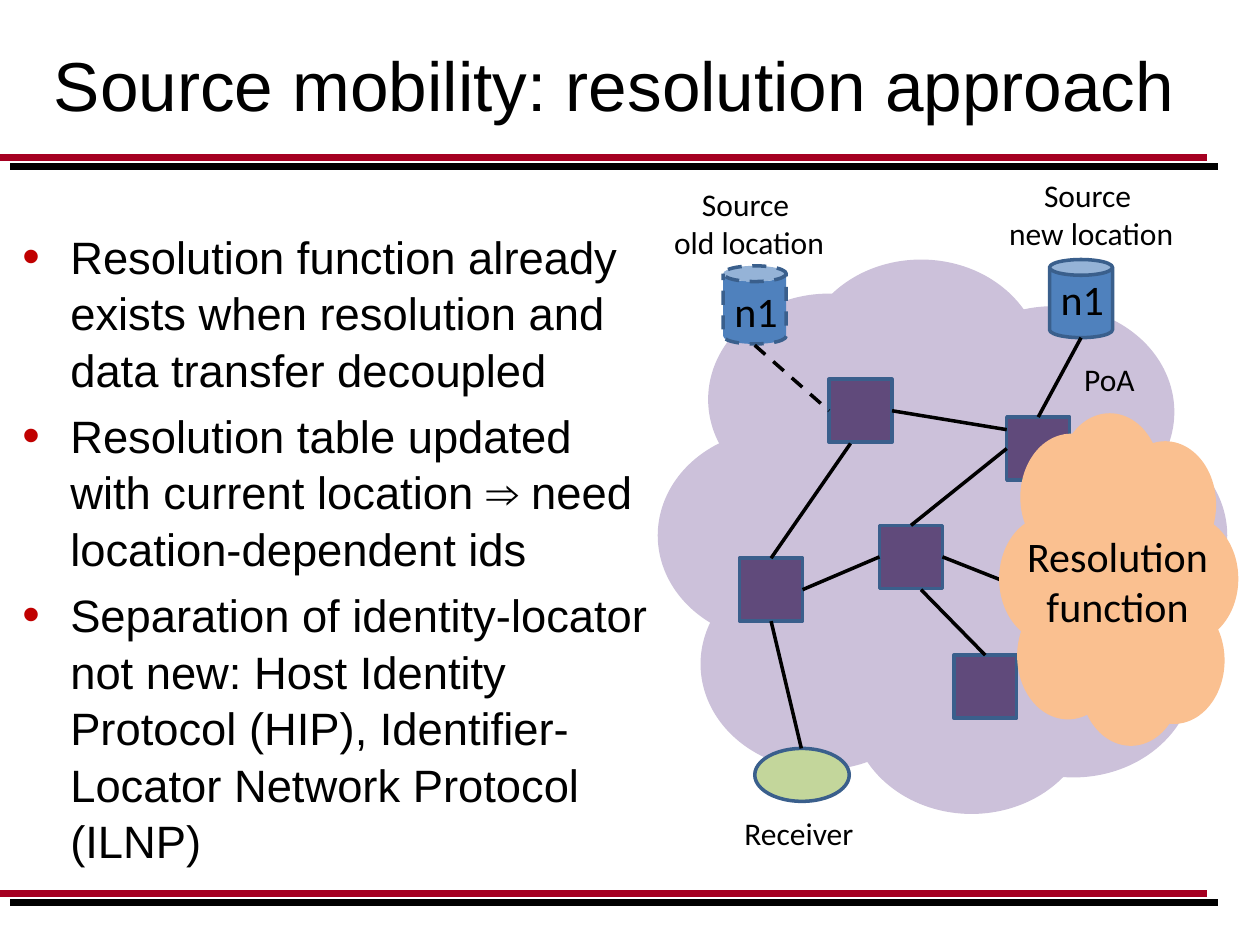
import pptx
import pptx.util
import pptx.dml.color
import pptx.oxml
import pptx.oxml.ns
from pptx.enum.dml import MSO_LINE
from pptx.enum.shapes import MSO_CONNECTOR, MSO_SHAPE
from pptx.enum.text import MSO_ANCHOR, MSO_AUTO_SIZE, PP_ALIGN

SCALE = 9144  # EMU per px, 100 px to the inch
TOP, LEFT, BOTTOM, RIGHT = range(4)
COLORS = {
    "text": "000000", "black": "000000", "rule": "A50021", "bullet": "C00000",
    "network": "CCC1DA", "resolver": "FAC090", "node": "604A7B",
    "source": "4F81BD", "receiver": "C3D69B", "outline": "3A5F8C",
}
# Lobes of a cloud, offset from its top left corner
LOBE_SIZE = (192, 168)
LOBES = [(59, 90), (113, 0), (218, 37), (34, 237), (153, 272),
         (234, 243), (40, 27), (0, 135), (260, 135), (153, 142)]


def px(length):
    return pptx.util.Emu(round(length * SCALE))


def color(name):
    return pptx.dml.color.RGBColor.from_string(COLORS[name])


def add_text(para, text, size=18, font="Calibri", ink="text"):
    span = para.add_run()
    span.text = text
    span.font.size = pptx.util.Pt(size)
    span.font.name = font
    span.font.color.rgb = color(ink)


class Painter:
    def __init__(self, page, outline_width=2):
        self.page = page
        self.outline_width = outline_width

    def text(self, left, top, width, height, lines, align=PP_ALIGN.LEFT,
             wrap=False, grow=True, anchor=MSO_ANCHOR.TOP, **style):
        box = self.page.shapes.add_textbox(px(left), px(top), px(width), px(height))
        frame = box.text_frame
        frame.word_wrap = wrap
        frame.auto_size = MSO_AUTO_SIZE.SHAPE_TO_FIT_TEXT if grow else MSO_AUTO_SIZE.NONE
        frame.vertical_anchor = anchor
        for index, line in enumerate(lines):
            para = frame.add_paragraph() if index else frame.paragraphs[0]
            para.alignment = align
            add_text(para, line, **style)
        return frame

    def bullets(self, left, top, width, height, items, **style):
        frame = self.text(left, top, width, height, items, wrap=True, grow=False, **style)
        for para in frame.paragraphs:
            para.space_before = pptx.util.Pt(5.5)
            para.line_spacing = 1.04
            props = para._p.get_or_add_pPr()
            props.set("marL", str(px(38)))
            props.set("indent", str(-px(38)))
            space = pptx.oxml.ns.nsdecls("a")
            for markup in (
                f'<a:buClr {space}><a:srgbClr val="{COLORS["bullet"]}"/></a:buClr>',
                f'<a:buSzPct {space} val="110000"/>',
                f'<a:buFont {space} typeface="Arial"/>',
                f'<a:buChar {space} char="•"/>',
            ):
                props.append(pptx.oxml.parse_xml(markup))

    def shape(self, kind, left, top, width, height, fill, outline=None, dashed=False):
        shape = self.page.shapes.add_shape(kind, px(left), px(top), px(width), px(height))
        shape.shadow.inherit = False
        shape.fill.solid()
        shape.fill.fore_color.rgb = color(fill)
        if outline:
            self.stroke(shape.line, outline, self.outline_width, dashed)
        else:
            shape.line.fill.background()
        return shape

    def stroke(self, line, ink, width, dashed):
        line.color.rgb = color(ink)
        line.width = pptx.util.Pt(width)
        if dashed:
            line.dash_style = MSO_LINE.DASH

    def cloud(self, left, top, across, down, fill):
        width, height = LOBE_SIZE
        for x, y in LOBES:
            self.shape(MSO_SHAPE.OVAL, left + x * across, top + y * down,
                       width * across, height * down, fill)

    def line(self, start, end, ink="black", width=2, dashed=False):
        """Each end is a point (x, y) or a pair (shape, side)."""
        line = self.page.shapes.add_connector(MSO_CONNECTOR.STRAIGHT, 0, 0, 0, 0)
        if isinstance(start[0], int):
            line.begin_x, line.begin_y = map(px, start)
        if isinstance(end[0], int):
            line.end_x, line.end_y = map(px, end)
        if not isinstance(start[0], int):
            line.begin_connect(*start)
        if not isinstance(end[0], int):
            line.end_connect(*end)
        self.stroke(line.line, ink, width, dashed)
        line._element.spPr.append(pptx.oxml.parse_xml(
            f'<a:effectLst {pptx.oxml.ns.nsdecls("a")}/>'))


def main():
    deck = pptx.Presentation()
    deck.slide_width, deck.slide_height = px(1000), px(750)
    painter = Painter(deck.slides.add_slide(deck.slide_layouts[6]))

    # Double rules above and below the content
    for y in (125, 709):
        painter.line((8, y + 7), (967, y + 7), width=4)
        painter.line((0, y), (958, y), ink="rule", width=4)

    # Title and bullets
    painter.text(33, 0, 967, 133, ["Source mobility: resolution approach"], wrap=True,
                 grow=False, anchor=MSO_ANCHOR.MIDDLE, size=39.6, font="Arial")
    painter.bullets(8, 175, 516, 550, [
        "Resolution function already exists when resolution and data transfer decoupled",
        "Resolution table updated with current location ⇒ need location-dependent ids",
        "Separation of identity-locator not new: Host Identity Protocol (HIP), "
        "Identifier-Locator Network Protocol (ILNP)",
    ], size=25.9, font="Arial")

    # Network cloud with its routers and end points
    painter.cloud(522, 206, 1, 1, "network")
    north, west, center, south, east, access = [
        painter.shape(MSO_SHAPE.RECTANGLE, left, top, 50, 50, "node", "outline")
        for left, top in [(658, 301), (587, 443), (698, 417),
                          (757, 520), (867, 464), (799, 331)]]
    painter.shape(MSO_SHAPE.OVAL, 599, 594, 75, 42, "receiver", "outline")
    painter.shape(MSO_SHAPE.CAN, 574, 211, 50, 62, "source", "outline", dashed=True)
    painter.shape(MSO_SHAPE.CAN, 833, 206, 50, 62, "source", "outline")

    # Links
    painter.line((599, 274), (north, LEFT), dashed=True)
    for start, end in [
        ((west, TOP), (675, 352)),
        ((access, TOP), (858, 268)),
        ((731, 468), (south, TOP)),
        ((636, 594), (west, BOTTOM)),
        ((north, RIGHT), (799, 341)),
        ((access, BOTTOM), (east, TOP)),
        ((799, 356), (center, TOP)),
        ((west, RIGHT), (center, LEFT)),
        ((center, RIGHT), (east, LEFT)),
    ]:
        painter.line(start, end)

    # Labels
    middle = PP_ALIGN.CENTER
    painter.text(524, 142, 141, 71, ["Source ", "old location"], middle)
    painter.text(790, 135, 152, 71, ["Source ", "new location"], middle)
    painter.text(581, 641, 108, 40, ["Receiver"])
    painter.text(850, 281, 61, 40, ["PoA"], middle)
    for left, top in [(573, 222), (832, 212)]:
        painter.text(left, top, 55, 50, ["n1"], size=24)

    # Resolution function, in front of the network
    painter.cloud(793, 328, 0.42, 0.6, "resolver")
    painter.text(789, 416, 196, 91, ["Resolution function"], middle, wrap=True, size=24)

    deck.save("out.pptx")


if __name__ == "__main__":
    main()
